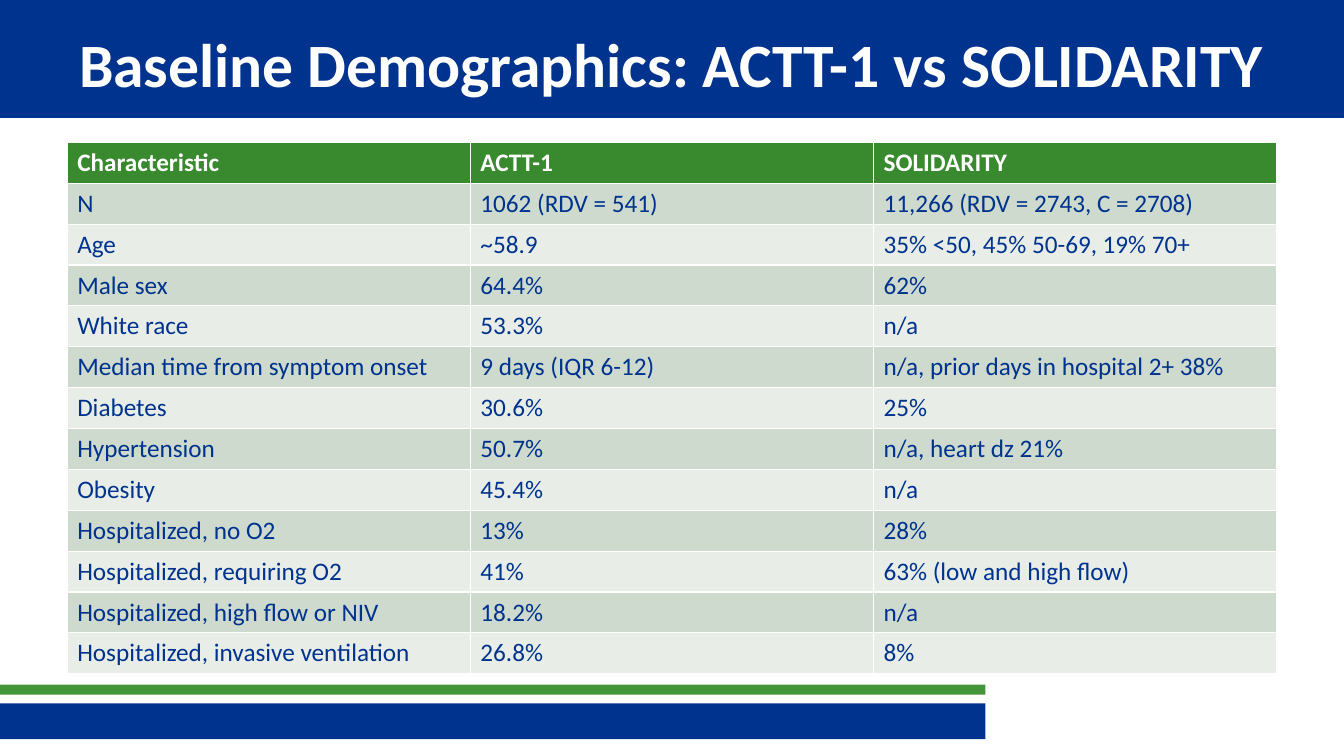
from pptx import Presentation
from pptx import util as u
from pptx.dml.color import RGBColor
from pptx.enum import shapes, text

Pt = u.Pt
FONT = "Calibri"
COLORS = {"blue": "00338E", "green": "439539", "header": "39892F",
          "odd": "CEDACD", "even": "E8EDE8", "white": "FFFFFF"}

# Content
TITLE = "Baseline Demographics: ACTT-1 vs SOLIDARITY"
ROWS = [
    ("Characteristic", "ACTT-1", "SOLIDARITY"),
    ("N", "1062 (RDV = 541)", "11,266 (RDV = 2743, C = 2708)"),
    ("Age", "~58.9", "35% <50, 45% 50-69, 19% 70+"),
    ("Male sex", "64.4%", "62%"),
    ("White race", "53.3%", "n/a"),
    ("Median time from symptom onset", "9 days (IQR 6-12)",
     "n/a, prior days in hospital 2+ 38%"),
    ("Diabetes", "30.6%", "25%"),
    ("Hypertension", "50.7%", "n/a, heart dz 21%"),
    ("Obesity", "45.4%", "n/a"),
    ("Hospitalized, no O2", "13%", "28%"),
    ("Hospitalized, requiring O2", "41%", "63% (low and high flow)"),
    ("Hospitalized, high flow or NIV", "18.2%", "n/a"),
    ("Hospitalized, invasive ventilation", "26.8%", "8%"),
]
# Bars: left, top, width, height, colour
BARS = [
    (-2, 502.5, 706, 25.5, "blue"),
    (-2, 489, 706, 7.2, "green"),
    (0, 0, 960, 84.2, "blue"),
]
MARGIN, TABLE_TOP, TABLE_WIDTH, ROW_HEIGHT = 48, 101.7, 864, 29.2


def rgb(name):
    return RGBColor.from_string(COLORS[name])


def paint(part, name):
    part.fill.solid()
    part.fill.fore_color.rgb = rgb(name)


def write(tf, words, size, color, bold):
    p = tf.paragraphs[0]
    r = p.add_run()
    r.text = words
    for key, value in {"name": FONT, "size": Pt(size), "bold": bold}.items():
        setattr(r.font, key, value)
    r.font.color.rgb = rgb(color)
    return p


prs = Presentation()
prs.slide_width, prs.slide_height = Pt(960), Pt(540)
s = prs.slides.add_slide(prs.slide_layouts[6])

# Title band and footer bars
for *box, color in BARS:
    sp = s.shapes.add_shape(shapes.MSO_SHAPE.RECTANGLE, *map(Pt, box))
    sp.shadow.inherit = False
    sp.line.fill.background()
    paint(sp, color)

# Title
tf = s.shapes.add_textbox(Pt(MARGIN), Pt(12), Pt(TABLE_WIDTH), Pt(66)).text_frame
for key, value in {"word_wrap": True, "margin_left": 0, "margin_right": 0,
                   "vertical_anchor": text.MSO_ANCHOR.MIDDLE}.items():
    setattr(tf, key, value)
write(tf, TITLE, 44, "white", True).alignment = text.PP_ALIGN.CENTER

# Demographics table, with white rules from the default table style
table = s.shapes.add_table(len(ROWS), len(ROWS[0]), Pt(MARGIN), Pt(TABLE_TOP),
                           Pt(TABLE_WIDTH), Pt(ROW_HEIGHT * len(ROWS))).table
for i, row in enumerate(ROWS):
    table.rows[i].height = Pt(ROW_HEIGHT)
    header = i == 0
    fill = "header" if header else "odd" if i % 2 else "even"
    for j, words in enumerate(row):
        cell = table.cell(i, j)
        paint(cell, fill)
        write(cell.text_frame, words, 18, "white" if header else "blue", header)

prs.save("out.pptx")
